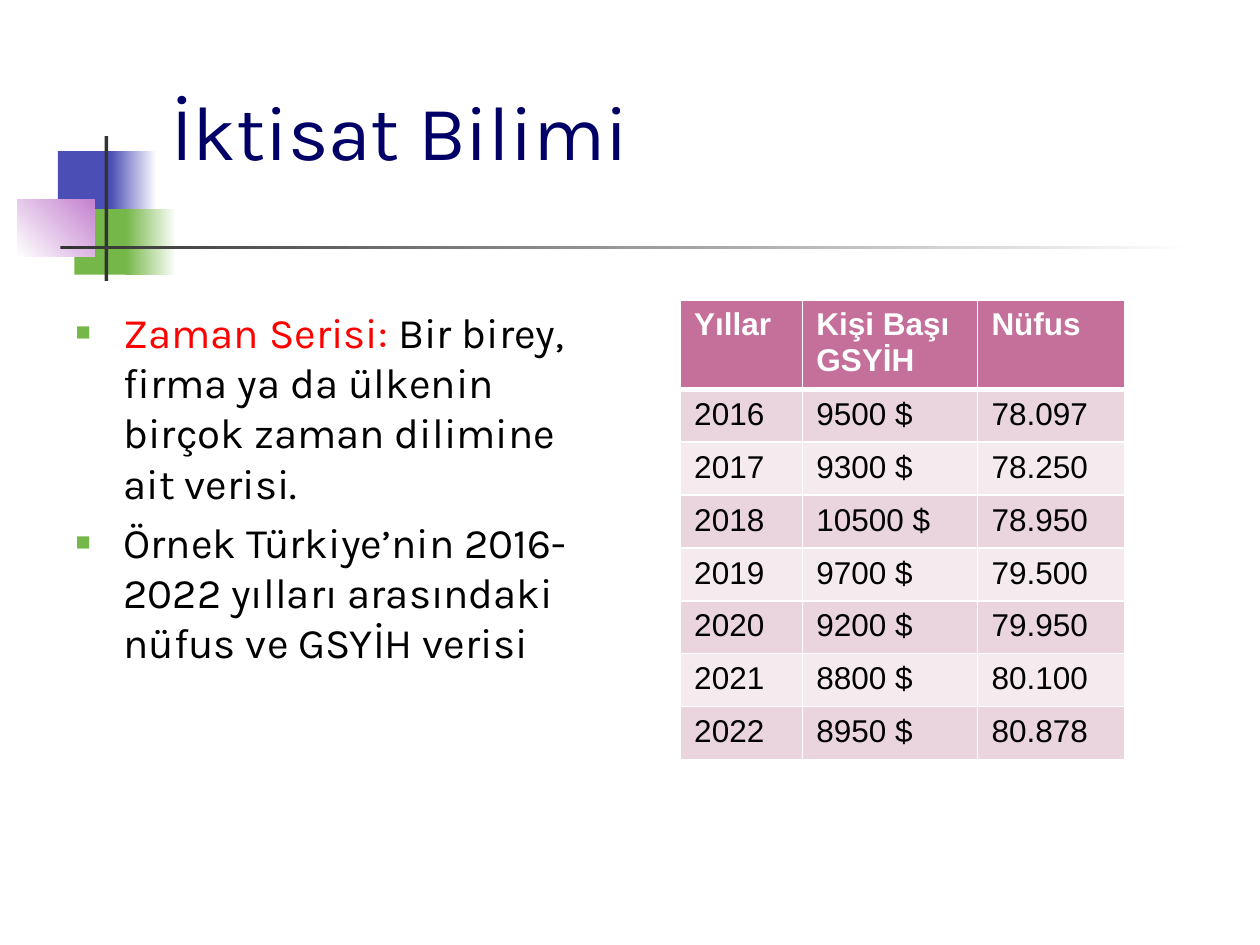
from lxml.etree import SubElement
from pptx import Presentation
from pptx.dml.color import RGBColor
from pptx.enum.shapes import MSO_SHAPE
from pptx.enum.text import MSO_ANCHOR, MSO_AUTO_SIZE
from pptx.oxml.ns import qn
from pptx.util import Inches, Pt

UNIT = Inches(0.1)
COLUMNS, ROWS = 100, 75

WHITE = RGBColor(0xFF, 0xFF, 0xFF)
BLACK = RGBColor(0x00, 0x00, 0x00)
RED = RGBColor(0xFF, 0x00, 0x00)
NAVY = RGBColor(0x00, 0x00, 0x66)
BLUE = RGBColor(0x4B, 0x4E, 0xB5)
GREEN = RGBColor(0x76, 0xB7, 0x49)
VIOLET = RGBColor(0xC4, 0x81, 0xCF)
CHARCOAL = RGBColor(0x33, 0x33, 0x33)
HEADER_PINK = RGBColor(0xC4, 0x70, 0x9A)
BAND_PINKS = (RGBColor(0xEA, 0xD5, 0xDE), RGBColor(0xF5, 0xEB, 0xEF))

BULLETS = [
    [("Zaman Serisi: ", RED),
     ("Bir birey, firma ya da ülkenin birçok zaman dilimine ait verisi.", BLACK)],
    [("Örnek Türkiye’nin 2016-2022 yılları arasındaki nüfus ve GSYİH verisi", BLACK)],
]
TABLE_ROWS = [
    ("Yıllar", "Kişi Başı GSYİH", "Nüfus"),
    ("2016", "9500 $", "78.097"),
    ("2017", "9300 $", "78.250"),
    ("2018", "10500 $", "78.950"),
    ("2019", "9700 $", "79.500"),
    ("2020", "9200 $", "79.950"),
    ("2021", "8800 $", "80.100"),
    ("2022", "8950 $", "80.878"),
]


def grid(*values):
    return [int(value * UNIT) for value in values]


def move(shape, box):
    shape.left, shape.top, shape.width, shape.height = grid(*box)


def style_font(font, name, size, color, bold=False):
    font.name, font.size, font.bold = name, Pt(size), bold
    font.color.rgb = color


def add_block(slide, box, colors, angle=0):
    shape = slide.shapes.add_shape(MSO_SHAPE.RECTANGLE, *grid(*box))
    shape.shadow.inherit = False
    shape.line.fill.background()
    if len(colors) == 1:
        shape.fill.solid()
        shape.fill.fore_color.rgb = colors[0]
        return
    shape.fill.gradient()
    shape.fill.gradient_angle = angle
    for stop, position, color in zip(shape.fill.gradient_stops, (0, 1), colors):
        stop.position = position
        stop.color.rgb = color


def add_ornament(slide, left, top):
    blocks = [
        ((3.2, 1.2, 4.8, 5.2), (BLUE,), 0),
        ((7.4, 1.2, 3.6, 5.2), (BLUE, WHITE), 0),
        ((4.5, 5.8, 4.6, 5.2), (GREEN,), 0),
        ((8.6, 5.8, 4, 5.2), (GREEN, WHITE), 0),
        ((0, 5, 6.1, 4.6), (WHITE, VIOLET), 45),
        ((6.9, 0, 0.3, 11.5), (CHARCOAL,), 0),
        ((3.4, 8.7, 90, 0.3), (CHARCOAL, WHITE), 0),
    ]
    for (x, y, width, height), colors, angle in blocks:
        add_block(slide, (left + x, top + y, width, height), colors, angle)


def fill_title(slide, box):
    title = slide.shapes.title
    move(title, box)
    frame = title.text_frame
    frame.text = "İktisat Bilimi"
    frame.auto_size = MSO_AUTO_SIZE.NONE
    frame.vertical_anchor = MSO_ANCHOR.MIDDLE
    paragraph = frame.paragraphs[0]
    paragraph.alignment = 1
    style_font(paragraph.runs[0].font, "Karla", 44, NAVY)


def set_bullet(paragraph):
    properties = paragraph._p.get_or_add_pPr()
    indent = Inches(0.38)
    properties.set("marL", str(indent))
    properties.set("indent", str(-indent))
    color = SubElement(properties, qn("a:buClr"))
    SubElement(color, qn("a:srgbClr"), val=str(GREEN))
    SubElement(properties, qn("a:buSzPct"), val="60000")
    SubElement(properties, qn("a:buFont"), typeface="Arial")
    SubElement(properties, qn("a:buChar"), char="■")


def fill_body(slide, box):
    body = slide.placeholders[1]
    move(body, box)
    frame = body.text_frame
    frame.auto_size = MSO_AUTO_SIZE.NONE
    for index, pieces in enumerate(BULLETS):
        paragraph = frame.add_paragraph() if index else frame.paragraphs[0]
        paragraph.space_before = Pt(24 * 0.2)
        set_bullet(paragraph)
        for text, color in pieces:
            run = paragraph.add_run()
            run.text = text
            style_font(run.font, "Karla", 24, color)


def set_borders(cell, top, bottom):
    properties = cell._tc.get_or_add_tcPr()
    for side, width in (("L", 1), ("R", 1), ("T", top), ("B", bottom)):
        line = SubElement(properties, qn(f"a:ln{side}"), w=str(Pt(width)))
        fill = SubElement(line, qn("a:solidFill"))
        SubElement(fill, qn("a:srgbClr"), val=str(WHITE))


def format_cell(cell, text, row):
    header = row == 0
    cell.text = text
    cell.margin_left = cell.margin_right = Inches(0.11)
    cell.margin_top = cell.margin_bottom = Inches(0.06)
    set_borders(cell, 3 if row == 1 else 1, 3 if header else 1)
    cell.fill.solid()
    cell.fill.fore_color.rgb = HEADER_PINK if header else BAND_PINKS[(row - 1) % 2]
    style_font(cell.text_frame.paragraphs[0].runs[0].font, "Arial", 18,
               WHITE if header else BLACK, header)


def add_data_table(slide, box):
    table = slide.shapes.add_table(len(TABLE_ROWS), 3, *grid(*box)).table
    for column, width in zip(table.columns, grid(9.7, 13.9, 11.7)):
        column.width = width
    for index, row in enumerate(table.rows):
        row.height = grid(4.2 if index else 7.1)[0]
        for cell, text in zip(row.cells, TABLE_ROWS[index]):
            format_cell(cell, text, index)


def main():
    presentation = Presentation()
    presentation.slide_width, presentation.slide_height = grid(COLUMNS, ROWS)
    slide = presentation.slides.add_slide(presentation.slide_layouts[1])
    add_ornament(slide, 1.4, 10.8)
    fill_body(slide, (5, 23.8, 44.2, 43.2))
    add_data_table(slide, (54, 23.8, 35.4, 36.6))
    fill_title(slide, (12.6, 2.3, 85.2, 16))
    presentation.save("out.pptx")


if __name__ == "__main__":
    main()
